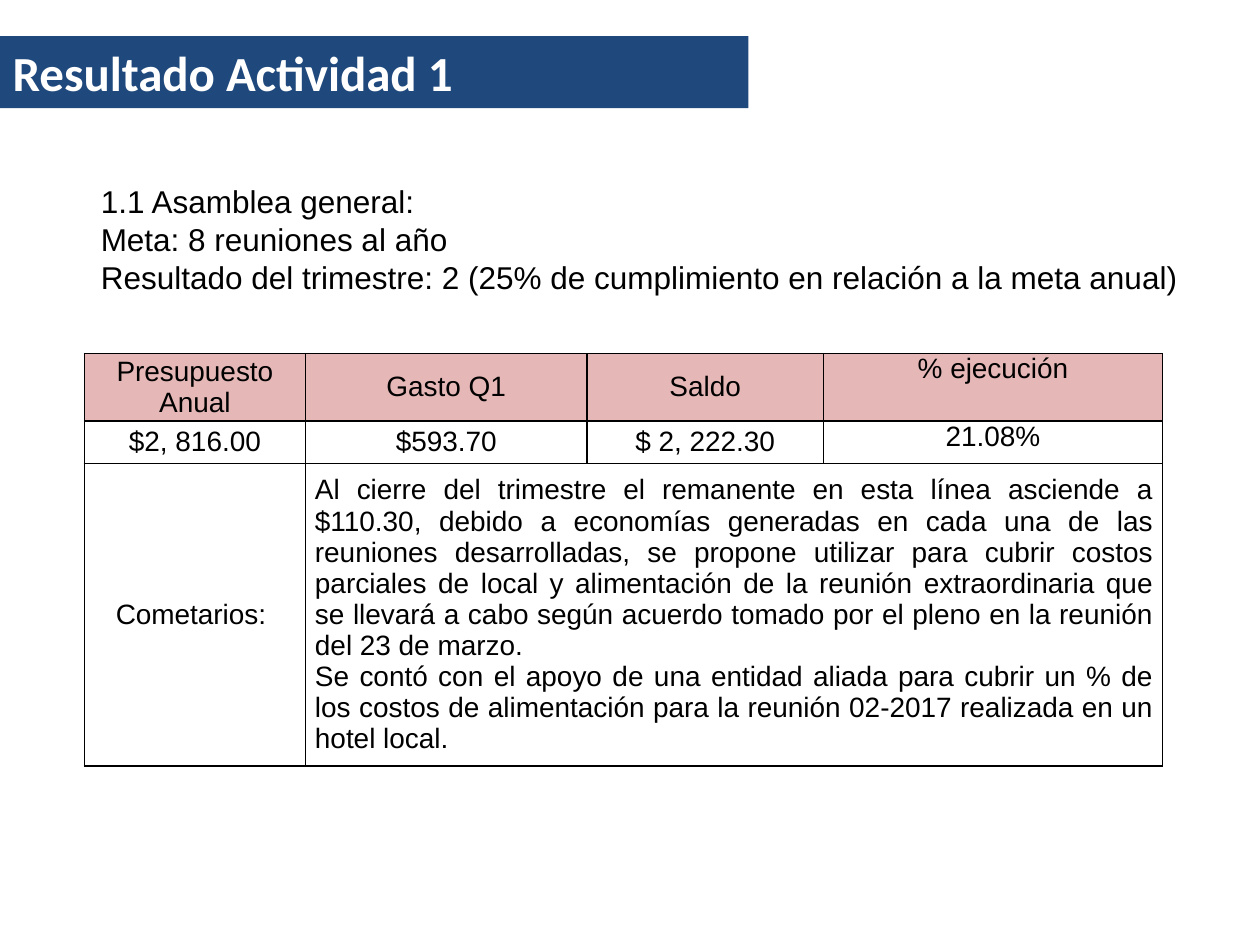
"""Build the quarterly result slide for activity 1."""
from dataclasses import dataclass
from typing import Optional

import pptx
import pptx.dml.color
import pptx.enum.text
import pptx.oxml
import pptx.oxml.ns
import pptx.util

Pt = pptx.util.Pt
RGB = pptx.dml.color.RGBColor
ALIGN = pptx.enum.text.PP_ALIGN
ANCHOR = pptx.enum.text.MSO_ANCHOR

NAVY = RGB(0x1F, 0x49, 0x7D)
PINK = RGB(0xE5, 0xB8, 0xB7)
WHITE = RGB(0xFF, 0xFF, 0xFF)
BLACK = RGB(0, 0, 0)

TITLE_FONT = {"name": "Calibri", "size": Pt(28), "bold": True}
BODY_FONT = {"name": "Arial", "size": Pt(18)}
CELL_FONT = {"name": "Arial", "size": Pt(16)}
TITLE_BOX = {"left": 0, "top": Pt(20.6), "width": Pt(427.7), "height": Pt(41.2)}
BODY_BOX = {"left": Pt(14.4), "top": Pt(100.1), "width": Pt(674.6), "height": Pt(72.7)}
CELL_BOX = {"margin_left": Pt(5.4), "margin_right": Pt(5.4), "margin_top": 0, "margin_bottom": 0}
FRAME = {"margin_left": Pt(7.2), "margin_right": Pt(7.2), "margin_top": Pt(3.6),
         "margin_bottom": Pt(3.6), "word_wrap": True, "vertical_anchor": ANCHOR.MIDDLE,
         "auto_size": pptx.enum.text.MSO_AUTO_SIZE.NONE}
TIGHT = {"space_before": 0, "space_after": 0, "line_spacing": 1.0}

COLS = (126.4, 160.8, 135.2, 193.8)
ROWS = (38.4, 24.4, 172.8)
BODY = (
    "1.1 Asamblea general: ",
    "Meta: 8 reuniones al año ",
    "Resultado del trimestre: 2 (25% de cumplimiento en relación a la meta anual)",
)
COMMENTS = (
    "Al cierre del trimestre el remanente en esta línea asciende a $110.30, debido a "
    "economías generadas en cada una de las reuniones desarrolladas, se propone utilizar "
    "para cubrir costos parciales de local y alimentación de la reunión extraordinaria que "
    "se llevará a cabo según acuerdo tomado por el pleno en la reunión del 23 de marzo. ",
    "Se contó con el apoyo de una entidad aliada para cubrir un % de los costos de "
    "alimentación para la reunión 02-2017 realizada en un hotel local. ",
)


@dataclass
class Cell:
    row: int
    col: int
    lines: tuple[str, ...]
    align: ALIGN = ALIGN.CENTER
    anchor: ANCHOR = ANCHOR.MIDDLE
    fill: Optional[RGB] = None


HEADS = ("Presupuesto Anual", "Gasto Q1", "Saldo", "% ejecución")
VALUES = ("$2, 816.00", "$593.70", "$ 2, 222.30", "21.08%")
CELLS = [
    Cell(row, col, (text,), anchor=ANCHOR.TOP if col == 3 else ANCHOR.MIDDLE, fill=fill)
    for row, (texts, fill) in enumerate(((HEADS, PINK), (VALUES, None)))
    for col, text in enumerate(texts)
] + [Cell(2, 0, ("Cometarios: ",)), Cell(2, 1, COMMENTS, ALIGN.JUSTIFY)]


def apply(target: object, values: dict) -> None:
    for name, value in values.items():
        setattr(target, name, value)


def write(tf, lines: tuple[str, ...], font: dict, color: RGB, align: ALIGN,
          indent: Optional[float] = None) -> None:
    for i, line in enumerate(lines):
        p = tf.paragraphs[0] if i == 0 else tf.add_paragraph()
        apply(p, {**TIGHT, "alignment": align})
        if indent is not None:
            p.level = 1
            pPr = p._p.get_or_add_pPr()
            pPr.set("marL", str(Pt(indent)))
            pPr.set("indent", "0")
            pPr.append(pptx.oxml.parse_xml(f"<a:buNone {pptx.oxml.ns.nsdecls('a')}/>"))
        r = p.add_run()
        r.text = line
        apply(r.font, font)
        r.font.color.rgb = color


def add_borders(cell) -> None:
    tcPr = cell._tc.get_or_add_tcPr()
    for side in "LRTB":
        tcPr.append(pptx.oxml.parse_xml(
            f'<a:ln{side} {pptx.oxml.ns.nsdecls("a")} w="{Pt(1)}"><a:solidFill>'
            f'<a:srgbClr val="{BLACK}"/></a:solidFill></a:ln{side}>'))


def add_budget_table(s) -> None:
    tbl = s.shapes.add_table(len(ROWS), len(COLS), Pt(48.2), Pt(202.1),
                             Pt(sum(COLS)), Pt(sum(ROWS))).table
    apply(tbl, {"first_row": False, "horz_banding": False})
    for column, width in zip(tbl.columns, COLS):
        column.width = Pt(width)
    for row, height in zip(tbl.rows, ROWS):
        row.height = Pt(height)
    tbl.cell(2, 1).merge(tbl.cell(2, 3))
    for cell in tbl.iter_cells():
        add_borders(cell)
        cell.fill.background()
    for item in CELLS:
        cell = tbl.cell(item.row, item.col)
        apply(cell, {**CELL_BOX, "vertical_anchor": item.anchor})
        if item.fill is not None:
            cell.fill.solid()
            cell.fill.fore_color.rgb = item.fill
        write(cell.text_frame, item.lines, CELL_FONT, BLACK, item.align)


def main() -> None:
    prs = pptx.Presentation()
    apply(prs, {"slide_width": Pt(720), "slide_height": Pt(540)})
    s = prs.slides.add_slide(prs.slide_layouts[1])
    title, body = s.shapes.title, s.placeholders[1]
    for sp, box in ((title, TITLE_BOX), (body, BODY_BOX)):
        apply(sp, box)
        apply(sp.text_frame, FRAME)
    title.fill.solid()
    title.fill.fore_color.rgb = NAVY
    write(title.text_frame, ("Resultado Actividad 1",), TITLE_FONT, WHITE, ALIGN.LEFT)
    write(body.text_frame, BODY, BODY_FONT, BLACK, ALIGN.JUSTIFY, indent=36)
    add_budget_table(s)
    prs.save("out.pptx")


if __name__ == "__main__":
    main()
